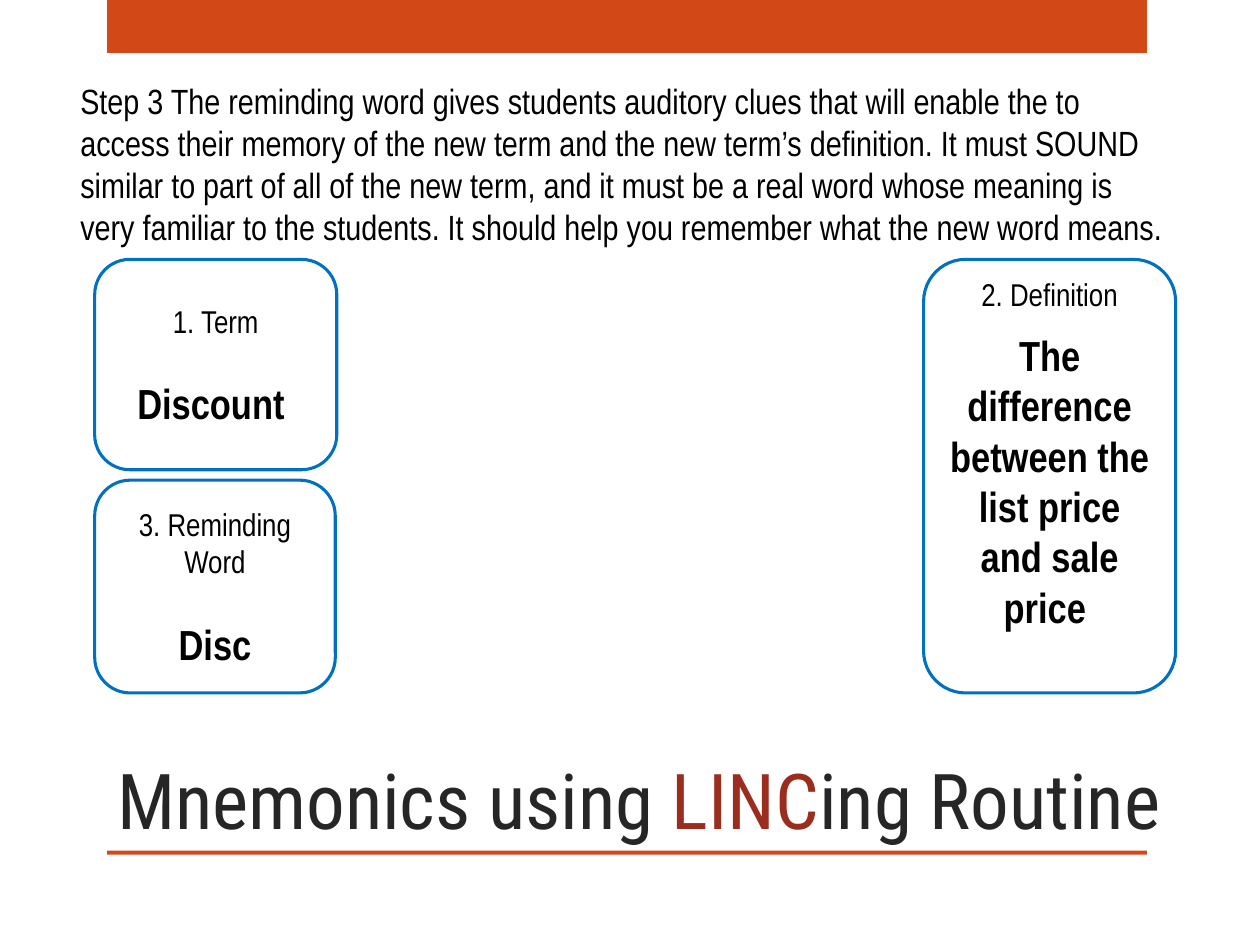
from pptx import Presentation
from pptx import util as u
from pptx.dml.color import RGBColor
from pptx.enum import shapes, text

Cm, Pt = u.Cm, u.Pt
BODY_FONT, TITLE_FONT = "Arial Narrow", "Roboto Condensed"
ORANGE, BLUE, BLACK = "D34817", "0070C0", "000000"
GREY, RED = "262626", "9B2D1F"


def colour(value):
    return RGBColor.from_string(value)


def add_span(para, words, size, font=BODY_FONT, ink=BLACK, bold=False):
    span = para.add_run()
    span.text = words
    span.font.name = font
    span.font.size = Pt(size)
    span.font.bold = bold
    span.font.color.rgb = colour(ink)


def add_bar(page, top, height):
    bar = page.shapes.add_shape(
        shapes.MSO_SHAPE.RECTANGLE, Cm(2.16), Cm(top), Cm(20.96), Cm(height))
    bar.shadow.inherit = False
    bar.fill.solid()
    bar.fill.fore_color.rgb = colour(ORANGE)
    bar.line.fill.background()


def add_text(page, left, top, width, height, spans, anchor):
    """Add a one-paragraph text box; each span is the arguments of add_span."""
    box = page.shapes.add_textbox(Cm(left), Cm(top), Cm(width), Cm(height))
    frame = box.text_frame
    frame.word_wrap = True
    frame.vertical_anchor = anchor
    for span in spans:
        add_span(frame.paragraphs[0], *span)


def add_card(page, left, top, width, height, label, answer, gap):
    """Add a rounded card with a label and, gap points below, a bold answer."""
    card = page.shapes.add_shape(
        shapes.MSO_SHAPE.ROUNDED_RECTANGLE, Cm(left), Cm(top), Cm(width), Cm(height))
    card.shadow.inherit = False
    card.fill.background()
    card.line.color.rgb = colour(BLUE)
    card.line.width = Pt(1.75)
    frame = card.text_frame
    frame.word_wrap = True
    frame.vertical_anchor = text.MSO_ANCHOR.MIDDLE
    heading, body = frame.paragraphs[0], frame.add_paragraph()
    heading.alignment = body.alignment = text.PP_ALIGN.CENTER
    body.space_before = Pt(gap)
    add_span(heading, label, 18)
    add_span(body, answer, 24, bold=True)
    return card


def main():
    deck = Presentation()
    deck.slide_width, deck.slide_height = Cm(25.4), Cm(19.05)
    page = deck.slides.add_slide(deck.slide_layouts[6])

    add_bar(page, 0, 1.07)
    add_bar(page, 17.15, 0.08)
    add_text(page, 2.11, 15.04, 22.23, 2.11, [
        ("Mnemonics using ", 44, TITLE_FONT, GREY),
        ("LINC", 44, TITLE_FONT, RED),
        ("ing Routine", 44, TITLE_FONT, GREY),
    ], text.MSO_ANCHOR.BOTTOM)
    add_text(page, 1.37, 1.48, 22.55, 3.64, [(
        "Step 3 The reminding word gives students auditory clues that will "
        "enable the to access their memory of the new term and the new term’s "
        "definition. It must SOUND similar to part of all of the new term, and "
        "it must be a real word whose meaning is very familiar to the students. "
        "It should help you remember what the new word means.", 20)],
        text.MSO_ANCHOR.TOP)

    add_card(page, 1.91, 5.23, 4.88, 4.24, "1. Term", "Discount ", 21.6)
    add_card(page, 1.91, 9.68, 4.85, 4.29, "3. Reminding Word", "Disc", 21.6)
    definition = add_card(
        page, 18.62, 5.23, 5.08, 8.74, "2. Definition",
        "The difference between the list price and sale price ", 9.6)
    definition.text_frame.vertical_anchor = text.MSO_ANCHOR.TOP
    definition.text_frame.margin_top = Cm(0.06)

    deck.save("out.pptx")


if __name__ == "__main__":
    main()
